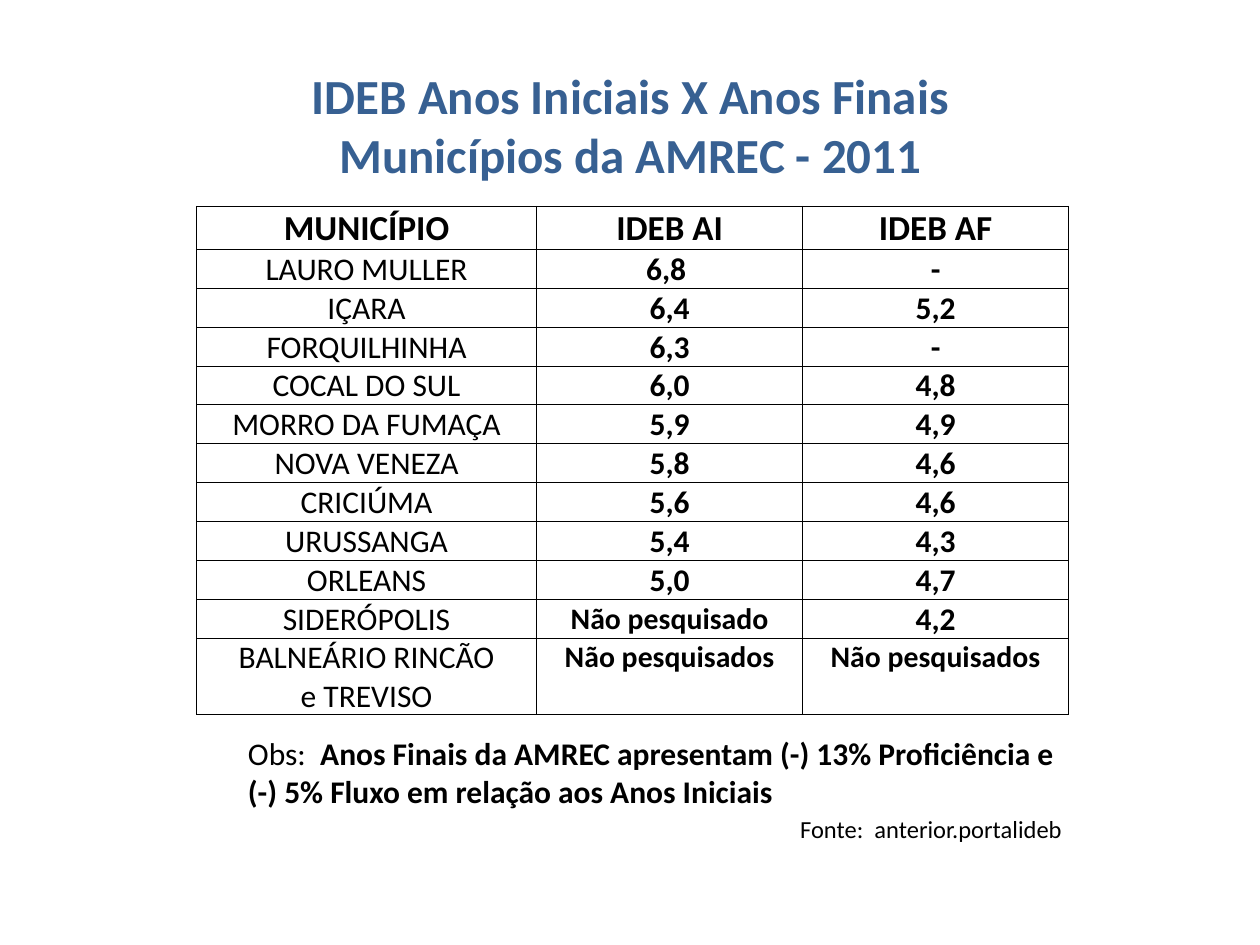
import pptx
import pptx.dml.color
import pptx.enum.text
import pptx.oxml
import pptx.oxml.ns
import pptx.util

Cm = pptx.util.Cm
Pt = pptx.util.Pt
ANCHOR = pptx.enum.text.MSO_ANCHOR
ALIGN = pptx.enum.text.PP_ALIGN

TITLE = "IDEB Anos Iniciais X Anos Finais Municípios da AMREC - 2011"
HEADER = ("MUNICÍPIO", "IDEB AI", "IDEB AF")
ROWS = [
    ("LAURO MULLER", "6,8 ", "-"),
    ("IÇARA", "6,4", "5,2"),
    ("FORQUILHINHA", "6,3", "-"),
    ("COCAL DO SUL", "6,0", "4,8"),
    ("MORRO DA FUMAÇA", "5,9", "4,9"),
    ("NOVA VENEZA", "5,8", "4,6"),
    ("CRICIÚMA", "5,6", "4,6"),
    ("URUSSANGA", "5,4", "4,3"),
    ("ORLEANS", "5,0", "4,7"),
    ("SIDERÓPOLIS", "Não pesquisado", "4,2"),
    ("BALNEÁRIO RINCÃO\ne TREVISO", "Não pesquisados", "Não pesquisados"),
]
NOTE = [
    ("Obs:  ", False),
    ("Anos Finais da AMREC apresentam (-) 13% Proficiência e "
     "(-) 5% Fluxo em relação aos Anos Iniciais", True),
]
SOURCE = [("Fonte:  anterior.portalideb", False)]

THEME = {
    "font": "Calibri", "title_color": "376092", "text_color": "000000",
    "title": 28, "header": 20, "body": 18, "missing": 17, "source": 14,
    "border": 0.5,
}
COL_WIDTHS = (6.86, 5.36, 5.36)
ROW_HEIGHTS = [0.87] + [0.78] * (len(ROWS) - 1) + [1.54]


def style(p, size, bold=None, color=THEME["text_color"]):
    p.font.name = THEME["font"]
    p.font.size = Pt(size)
    p.font.bold = bold
    p.font.color.rgb = pptx.dml.color.RGBColor.from_string(color)


def add_text(s, box, runs, size, color=THEME["text_color"], align=ALIGN.LEFT):
    """Add a wrapped text box of (text, bold) runs."""
    tf = s.shapes.add_textbox(*map(Cm, box)).text_frame
    tf.word_wrap = True
    tf.auto_size = pptx.enum.text.MSO_AUTO_SIZE.SHAPE_TO_FIT_TEXT
    p = tf.paragraphs[0]
    p.alignment = align
    style(p, size, color=color)
    for text, bold in runs:
        r = p.add_run()
        r.text = text
        r.font.bold = bold


def add_borders(cell):
    tc_pr = cell._tc.get_or_add_tcPr()
    for i, side in enumerate(("lnL", "lnR", "lnT", "lnB")):
        tc_pr.insert(i, pptx.oxml.parse_xml(
            f'<a:{side} {pptx.oxml.ns.nsdecls("a")} w="{Pt(THEME["border"])}">'
            f'<a:solidFill><a:srgbClr val="{THEME["text_color"]}"/></a:solidFill>'
            f'</a:{side}>'))


def fill_cell(cell, text, size, bold, anchor):
    cell.fill.background()
    cell.margin_left = cell.margin_right = cell.margin_top = Cm(0.02)
    cell.margin_bottom = 0
    cell.vertical_anchor = anchor
    cell.text_frame.text = text
    for p in cell.text_frame.paragraphs:
        p.alignment = ALIGN.CENTER
        style(p, size, bold)
    add_borders(cell)


def add_scores(s):
    rows = [HEADER] + ROWS
    table = s.shapes.add_table(
        len(rows), len(HEADER), Cm(3.96), Cm(4.16),
        Cm(sum(COL_WIDTHS)), Cm(sum(ROW_HEIGHTS))).table
    table.first_row = table.horz_banding = False
    for col, width in zip(table.columns, COL_WIDTHS):
        col.width = Cm(width)
    for i, (row, height) in enumerate(zip(rows, ROW_HEIGHTS)):
        table.rows[i].height = Cm(height)
        for j, text in enumerate(row):
            missing = text.startswith("Não")
            size = THEME["header" if i == 0 else "missing" if missing else "body"]
            top = missing and i == len(ROWS)
            fill_cell(table.cell(i, j), text, size, i == 0 or j > 0,
                      ANCHOR.TOP if top else ANCHOR.BOTTOM)


def main():
    prs = pptx.Presentation()
    prs.slide_width, prs.slide_height = Cm(25.4), Cm(19.05)
    s = prs.slides.add_slide(prs.slide_layouts[6])
    add_text(s, (4.17, 1.19, 17.07, 2.64), [(TITLE, True)], THEME["title"],
             THEME["title_color"], ALIGN.CENTER)
    add_scores(s)
    add_text(s, (15.88, 16.28, 6.76, 0.86), SOURCE, THEME["source"])
    add_text(s, (4.75, 14.68, 17.27, 1.8), NOTE, THEME["body"])
    prs.save("out.pptx")


if __name__ == "__main__":
    main()
